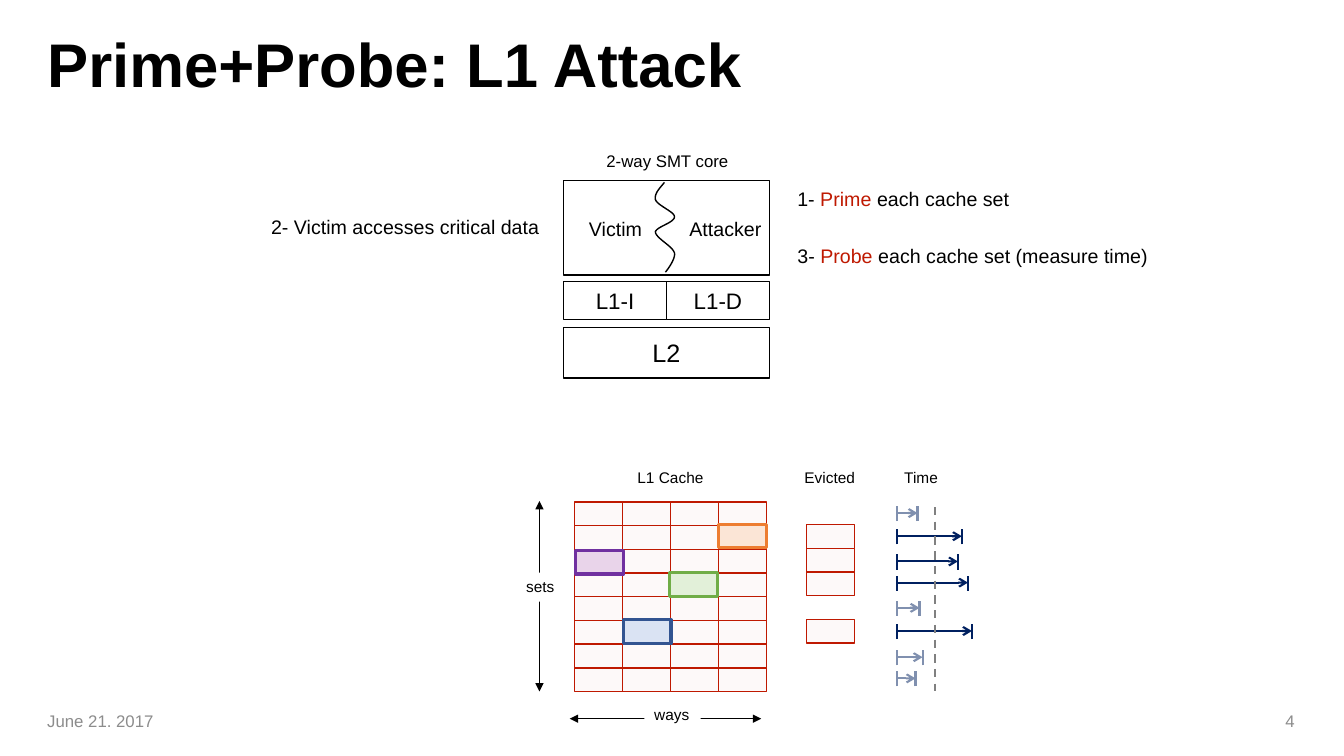
from lxml import etree
from pptx import Presentation
from pptx.dml.color import RGBColor
from pptx.enum.dml import MSO_LINE
from pptx.enum.shapes import MSO_CONNECTOR, MSO_SHAPE
from pptx.enum.text import MSO_ANCHOR, PP_ALIGN
from pptx.oxml.ns import qn
from pptx.util import Inches, Pt

RECT = MSO_SHAPE.RECTANGLE
STRAIGHT = MSO_CONNECTOR.STRAIGHT
DASH = MSO_LINE.DASH
TOP, MIDDLE = MSO_ANCHOR.TOP, MSO_ANCHOR.MIDDLE
LEFT, CENTER, RIGHT = PP_ALIGN.LEFT, PP_ALIGN.CENTER, PP_ALIGN.RIGHT

COLORS = {
    "black": "000000", "white": "FFFFFF", "gray": "8C8C8C", "threshold": "808080",
    "red": "BF1901", "cell": "FDF9F9", "fast": "8090AF", "slow": "002060",
    "green": "70AD47", "light green": "E2F0D9", "blue": "325491", "light blue": "DAE3F3",
    "orange": "ED7D31", "light orange": "FBE5D6", "purple": "7030A0", "light purple": "E9D4EA",
}


class SlideBuilder:
    font = "Arial"

    def __init__(self, slide):
        self.shapes = slide.shapes

    def color(self, name):
        return RGBColor.from_string(COLORS[name])

    def label(self, sp, runs, size, align=LEFT, anchor=MIDDLE, wrap=True, bold=False):
        """Fill a shape with one paragraph; runs are (text, color) pairs."""
        tf = sp.text_frame
        tf.word_wrap = wrap
        tf.vertical_anchor = anchor
        p = tf.paragraphs[0]
        p.alignment = align
        for text, color in runs:
            r = p.add_run()
            r.text = text
            r.font.name = self.font
            r.font.size = Pt(size)
            r.font.bold = bold
            r.font.color.rgb = self.color(color)
        return p

    def text(self, x, y, w, h, runs, size, **style):
        sp = self.shapes.add_textbox(Inches(x), Inches(y), Inches(w), Inches(h))
        return self.label(sp, runs, size, **style)

    def rect(self, x, y, w, h, fill, line=None, width=1):
        sp = self.shapes.add_shape(RECT, Inches(x), Inches(y), Inches(w), Inches(h))
        sp.shadow.inherit = False
        sp.fill.solid()
        sp.fill.fore_color.rgb = self.color(fill)
        if line:
            sp.line.color.rgb = self.color(line)
            sp.line.width = Pt(width)
        else:
            sp.line.fill.background()
        return sp

    def line(self, x1, y1, x2, y2, color, width, head=None, tail=None, dash=None):
        cx = self.shapes.add_connector(STRAIGHT, Inches(x1), Inches(y1), Inches(x2), Inches(y2))
        cx.line.color.rgb = self.color(color)
        cx.line.width = Pt(width)
        if dash:
            cx.line.dash_style = dash
        sp_pr = cx._element.spPr
        ln = sp_pr.find(qn("a:ln"))
        for tag, kind in (("a:headEnd", head), ("a:tailEnd", tail)):
            if kind:
                etree.SubElement(ln, qn(tag)).set("type", kind)
        etree.SubElement(sp_pr, qn("a:effectLst"))

    def curve(self, start, segments, color, width, steps=12):
        """Draw joined cubic Bezier segments as a fine open outline."""
        points, p0 = [], start
        for p1, p2, p3 in segments:
            for i in range(1, steps + 1):
                t = i / steps
                u = 1 - t
                points.append(tuple(
                    Inches(u**3 * a + 3 * u * u * t * b + 3 * u * t * t * c + t**3 * d)
                    for a, b, c, d in zip(p0, p1, p2, p3)))
            p0 = p3
        fb = self.shapes.build_freeform(Inches(start[0]), Inches(start[1]))
        fb.add_line_segments(points, close=False)
        sp = fb.convert_to_shape()
        sp.shadow.inherit = False
        sp.fill.background()
        sp.line.color.rgb = self.color(color)
        sp.line.width = Pt(width)

    def timing(self, y, length, color):
        """Draw a measured time: an arrow between two end ticks."""
        x = 8.9
        self.line(x, y, x + length, y, color, 1.5, tail="arrow")
        for tick in (x, x + length):
            self.line(tick, y + 0.08, tick, y - 0.07, color, 1.5)


def main():
    prs = Presentation()
    prs.slide_width, prs.slide_height = Inches(13.33), Inches(7.5)
    s = SlideBuilder(prs.slides.add_slide(prs.slide_layouts[6]))

    # Title
    p = s.text(0.37, 0.27, 12.58, 0.79, [("Prime+Probe: L1 Attack", "black")], 44, bold=True)
    p.line_spacing = 0.9

    # Core with its caches
    for x, y, w, h, name, size in (
        (5.59, 3.25, 2.04, 0.5, "L2", 18),
        (5.59, 2.79, 1.02, 0.38, "L1-I", 16),
        (6.61, 2.79, 1.02, 0.38, "L1-D", 16),
    ):
        sp = s.rect(x, y, w, h, "white", "black")
        s.label(sp, [(name, "black")], size, align=CENTER)
    s.rect(5.59, 1.79, 2.04, 0.94, "white", "black")
    for x, name in ((6.62, "Attacker"), (5.53, "Victim")):
        s.text(x, 2.08, 1.15, 0.37, [(name, "black")], 14, align=CENTER)
    s.curve((6.59, 1.81), [
        ((6.54, 1.87), (6.49, 1.92), (6.5, 1.98)),
        ((6.52, 2.04), (6.69, 2.1), (6.69, 2.15)),
        ((6.69, 2.21), (6.51, 2.25), (6.5, 2.3)),
        ((6.5, 2.36), (6.67, 2.44), (6.69, 2.51)),
        ((6.7, 2.58), (6.6, 2.7), (6.6, 2.7)),
    ], "black", 1)

    # Attack steps
    for x, y, w, runs in (
        (7.81, 1.79, 2.46, [("1-", "black"), (" Prime", "red"), (" each cache set", "black")]),
        (2.59, 2.06, 2.92, [("2- Victim accesses critical data", "black")]),
        (7.81, 2.35, 3.69, [("3-", "black"), (" Probe ", "red"),
                            ("each cache set (measure time)", "black")]),
    ):
        s.text(x, y, w, 0.37, runs, 14)

    # Captions
    for x, y, w, h, caption, size, align in (
        (5.9, 1.45, 1.44, 0.3, "2-way SMT core", 12, CENTER),
        (6.22, 4.59, 0.86, 0.29, "L1 Cache", 11, CENTER),
        (7.88, 4.59, 0.71, 0.29, "Evicted", 11, LEFT),
        (8.87, 4.59, 0.54, 0.29, "Time", 11, LEFT),
    ):
        s.text(x, y, w, h, [(caption, "black")], size, align=align, anchor=TOP, wrap=False)

    # Axes of the cache grid
    s.line(5.65, 7.13, 7.55, 7.13, "black", 1, head="triangle", tail="triangle")
    s.line(5.35, 4.97, 5.35, 6.86, "black", 1, head="triangle", tail="triangle")
    for x, y, w, name in ((6.39, 6.95, 0.56, "ways"), (5.12, 5.68, 0.5, "sets")):
        sp = s.rect(x, y, w, 0.29, "white")
        s.label(sp, [(name, "black")], 11, anchor=TOP, wrap=False)

    # Cache grid: 8 sets by 4 ways
    grid_x, grid_y, cell_w, cell_h = 5.7, 4.98, 0.475, 0.235
    for row in range(8):
        for col in range(4):
            s.rect(grid_x + col * cell_w, grid_y + row * cell_h, cell_w, cell_h, "cell", "red")

    # Evicted sets
    for row in (1, 2, 3, 5):
        s.rect(8, 4.97 + row * cell_h, cell_w, cell_h, "cell", "red")

    # Probe times and the threshold
    for y, length, color in (
        (5.09, 0.2, "fast"), (5.32, 0.64, "slow"), (5.57, 0.6, "slow"), (5.78, 0.7, "slow"),
        (6.03, 0.22, "fast"), (6.26, 0.74, "slow"), (6.52, 0.25, "fast"), (6.73, 0.18, "fast"),
    ):
        s.timing(y, length, color)
    s.line(9.27, 5.03, 9.27, 6.86, "threshold", 1.5, dash=DASH)

    # Cells touched by the victim
    for x, y, color in (
        (6.64, 5.68, "green"), (6.18, 6.15, "blue"), (7.13, 5.2, "orange"), (5.71, 5.46, "purple"),
    ):
        s.rect(x, y, cell_w, cell_h, "light " + color, color, 2.25)

    # Footer
    s.text(0.37, 6.95, 3, 0.4, [("June 21. 2017", "gray")], 12)
    s.text(9.94, 6.95, 3, 0.4, [("4", "gray")], 12, align=RIGHT)

    prs.save("out.pptx")


if __name__ == "__main__":
    main()
